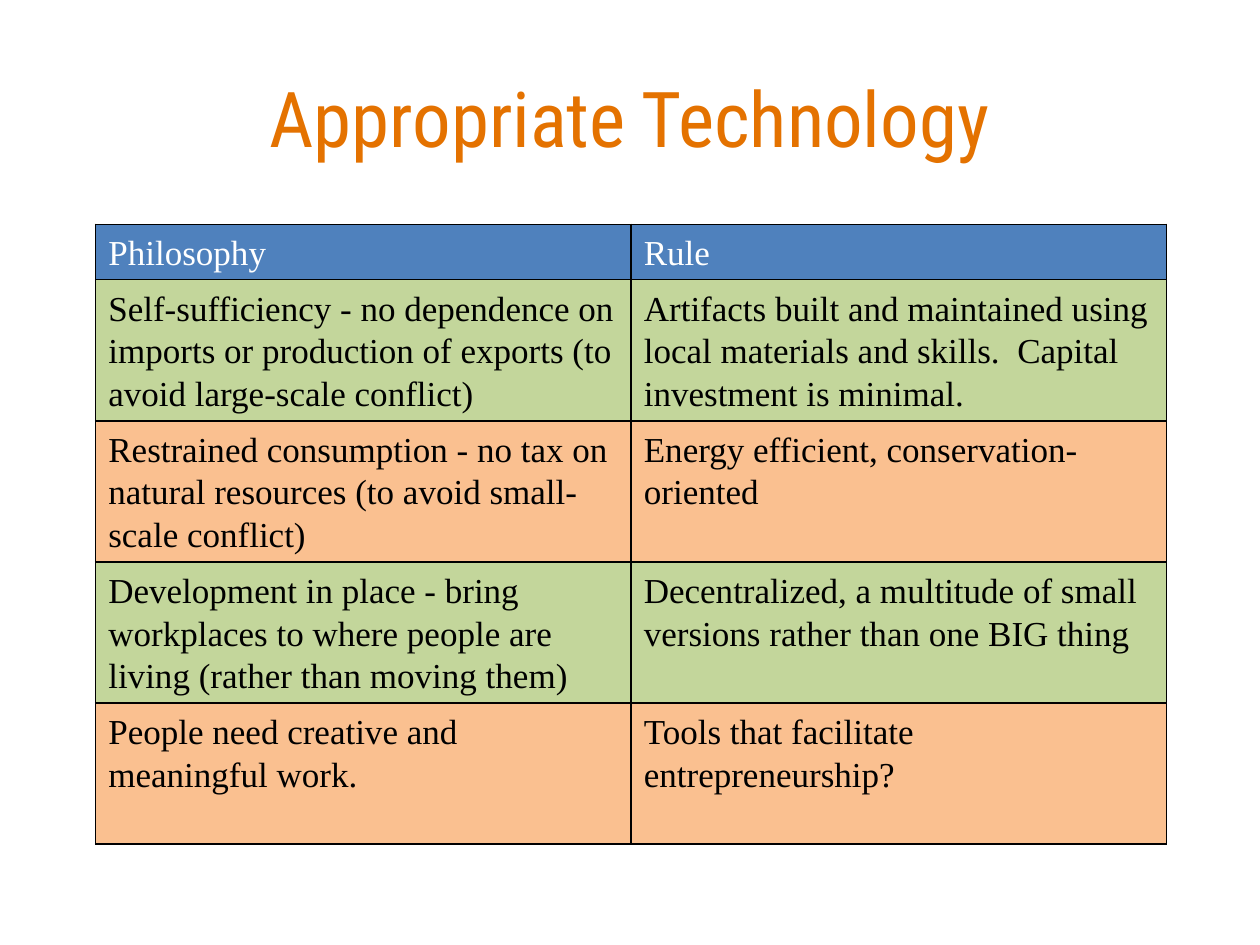
import dataclasses

import pptx
import pptx.dml.color
import pptx.enum.text
import pptx.oxml.ns
import pptx.util
from lxml import etree
from pptx.util import Inches

COLORS = {
    "title": "E47200",
    "header": "4F81BD",
    "green": "C3D69B",
    "orange": "FAC090",
    "white": "FFFFFF",
    "black": "000000",
}


@dataclasses.dataclass
class Row:
    philosophy: str
    rule: str
    fill: str
    color: str = "black"
    height: float = 1.12


ROWS = [
    Row("Philosophy", "Rule", "header", "white", 0.44),
    Row("Self-sufficiency - no dependence on imports or production of exports "
        "(to avoid large-scale conflict)",
        "Artifacts built and maintained using local materials and skills.  "
        "Capital investment is minimal.", "green"),
    Row("Restrained consumption - no tax on natural resources "
        "(to avoid small-scale conflict)",
        "Energy efficient, conservation-oriented", "orange"),
    Row("Development in place - bring workplaces to where people are living "
        "(rather than moving them)",
        "Decentralized, a multitude of small versions rather than one BIG thing",
        "green"),
    Row("People need creative and meaningful work.",
        "Tools that facilitate entrepreneurship?", "orange"),
]


def rgb(name: str) -> pptx.dml.color.RGBColor:
    return pptx.dml.color.RGBColor.from_string(COLORS[name])


def format_runs(p, font: str, size: int, color: str) -> None:
    for r in p.runs:
        r.font.name = font
        r.font.size = pptx.util.Pt(size)
        r.font.color.rgb = rgb(color)


def add_borders(cell) -> None:
    """Put a 1 pt black line on all four sides; lines precede the fill."""
    qn = pptx.oxml.ns.qn
    props = cell._tc.get_or_add_tcPr()
    for i, side in enumerate(("lnL", "lnR", "lnT", "lnB")):
        line = etree.Element(qn(f"a:{side}"), w=str(pptx.util.Pt(1)))
        fill = etree.SubElement(line, qn("a:solidFill"))
        etree.SubElement(fill, qn("a:srgbClr"), val=COLORS["black"])
        props.insert(i, line)


def fill_cell(cell, text: str, row: Row) -> None:
    cell.text_frame.text = text
    p = cell.text_frame.paragraphs[0]
    p.line_spacing = 1.1
    format_runs(p, "Times New Roman", 20, row.color)
    cell.fill.solid()
    cell.fill.fore_color.rgb = rgb(row.fill)
    add_borders(cell)


def add_title(s, text: str) -> None:
    sp = s.shapes.title
    sp.left, sp.top = Inches(0.5), Inches(0.3)
    sp.width, sp.height = Inches(9), Inches(1.25)
    tf = sp.text_frame
    tf.text = text
    tf.vertical_anchor = pptx.enum.text.MSO_ANCHOR.MIDDLE
    p = tf.paragraphs[0]
    p.alignment = pptx.enum.text.PP_ALIGN.CENTER
    format_runs(p, "Roboto Condensed", 44, "title")


def add_rules_table(s, rows: list[Row]) -> None:
    height = sum(row.height for row in rows)
    table = s.shapes.add_table(len(rows), 2, Inches(0.76), Inches(1.78),
                               Inches(8.5), Inches(height)).table
    for i, row in enumerate(rows):
        table.rows[i].height = Inches(row.height)
        for j, text in enumerate((row.philosophy, row.rule)):
            fill_cell(table.cell(i, j), text, row)


def main() -> None:
    prs = pptx.Presentation()
    prs.slide_width, prs.slide_height = Inches(10), Inches(7.5)
    # Title-only layout
    s = prs.slides.add_slide(prs.slide_layouts[5])
    add_title(s, "Appropriate Technology")
    add_rules_table(s, ROWS)
    prs.save("out.pptx")


if __name__ == "__main__":
    main()
